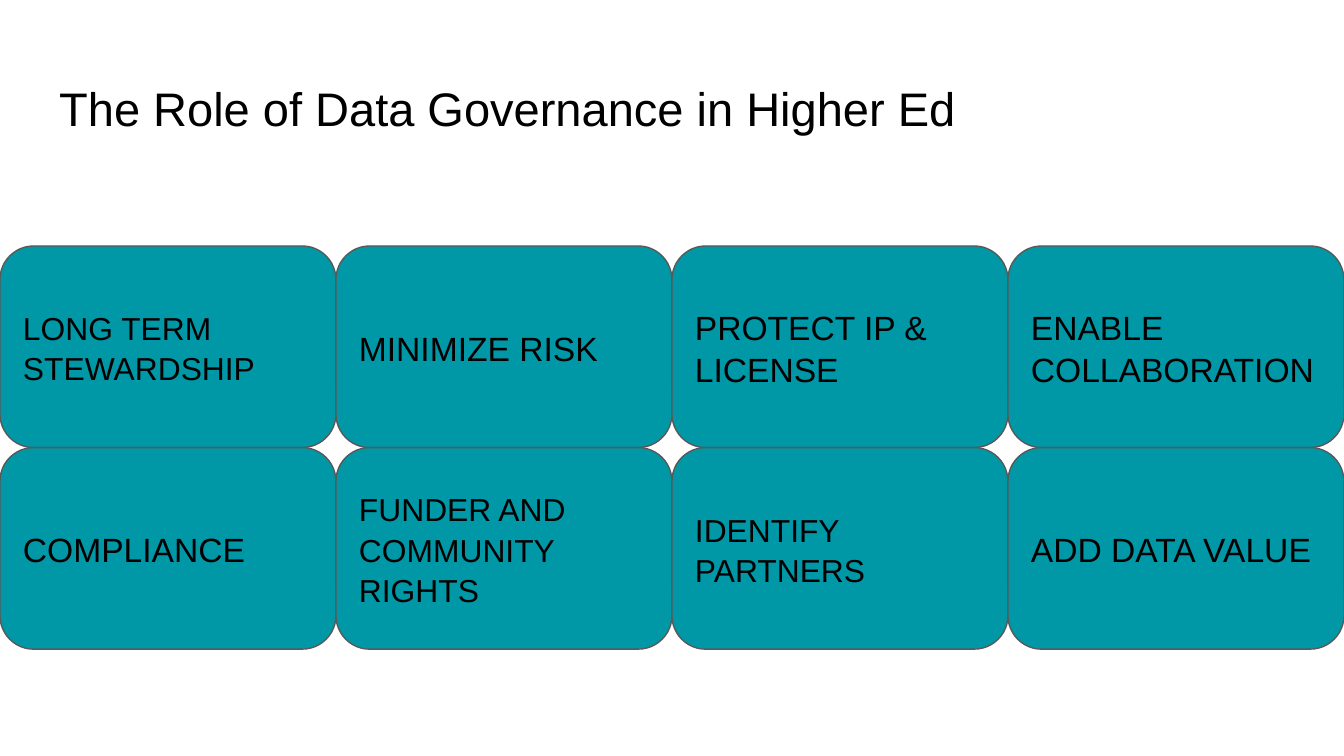
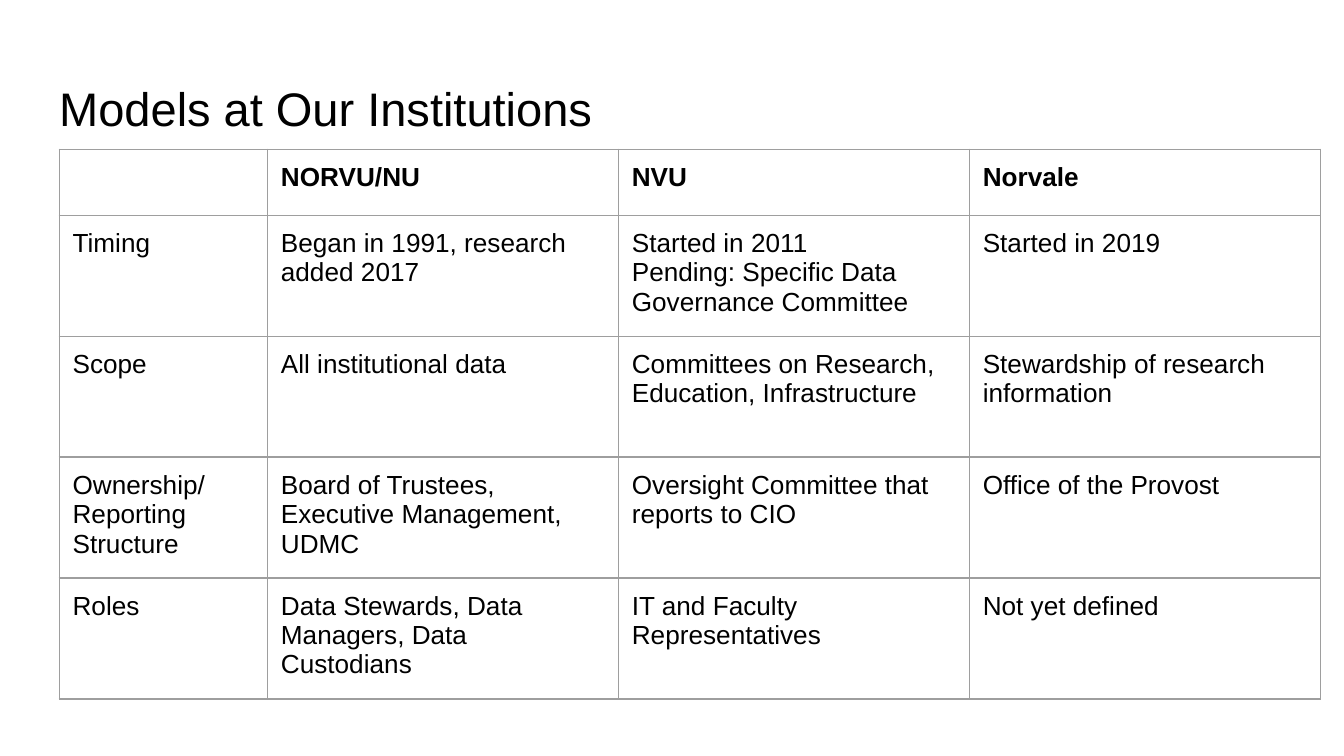
from lxml.etree import SubElement
from pptx import Presentation
from pptx.dml.color import RGBColor
from pptx.enum.shapes import MSO_SHAPE
from pptx.enum.text import MSO_ANCHOR, PP_ALIGN
from pptx.oxml.ns import qn
from pptx.util import Pt

FONT, BLACK, WHITE = "Arial", "000000", "FFFFFF"
TEAL, OUTLINE, GRID = "0097A7", "595959", "9E9E9E"
INSET = 7.2

ROLES_TITLE = "The Role of Data Governance in Higher Ed"
ROLES = [
    [("LONG TERM STEWARDSHIP", 17), ("MINIMIZE RISK", 18),
     ("PROTECT IP & LICENSE", 18), ("ENABLE COLLABORATION", 18)],
    [("COMPLIANCE", 18), ("FUNDER AND COMMUNITY RIGHTS", 17),
     ("IDENTIFY PARTNERS", 17), ("ADD DATA VALUE", 18)],
]
CARD_TOP, CARD_W, CARD_H = 131.8, 180, 108

MODELS_TITLE = "Models at Our Institutions"
MODELS = [
    ["", "NORVU/NU", "NVU", "Norvale"],
    ["Timing", "Began in 1991, research added 2017",
     "Started in 2011\nPending: Specific Data Governance Committee", "Started in 2019"],
    ["Scope", "All institutional data",
     "Committees on Research, Education, Infrastructure",
     "Stewardship of research information"],
    ["Ownership/\nReporting Structure", "Board of Trustees, Executive Management, UDMC",
     "Oversight Committee that reports to CIO", "Office of the Provost"],
    ["Roles", "Data Stewards, Data Managers, Data Custodians",
     "IT and Faculty Representatives", "Not yet defined"],
]
COLS = [111.6, 188, 188, 188]
ROWS = [35.3] + [64.8] * 4


def color(value):
    return RGBColor.from_string(value)


def inset(box):
    box.margin_left = box.margin_right = Pt(INSET)
    box.margin_top = box.margin_bottom = Pt(INSET)


def style_text(tf, size, bold=False, spacing=1.0):
    tf.word_wrap = True
    for p in tf.paragraphs:
        p.alignment = PP_ALIGN.LEFT
        p.line_spacing = spacing
        p.font.size = Pt(size)
        for r in p.runs:
            r.font.name = FONT
            r.font.size = Pt(size)
            r.font.bold = bold
            r.font.color.rgb = color(BLACK)


def add_slide(prs, title):
    s = prs.slides.add_slide(prs.slide_layouts[5])
    s.background.fill.solid()
    s.background.fill.fore_color.rgb = color(WHITE)
    sp = s.shapes.title
    sp.left, sp.top, sp.width, sp.height = Pt(24.5), Pt(35.3), Pt(671), Pt(45.2)
    tf = sp.text_frame
    tf.text = title
    inset(tf)
    tf.vertical_anchor = MSO_ANCHOR.MIDDLE
    style_text(tf, 25.2)
    return s


def add_card(s, row, col, text, size):
    sp = s.shapes.add_shape(MSO_SHAPE.ROUNDED_RECTANGLE, Pt(col * CARD_W),
                            Pt(CARD_TOP + row * CARD_H), Pt(CARD_W), Pt(CARD_H))
    sp.shadow.inherit = False
    sp.fill.solid()
    sp.fill.fore_color.rgb = color(TEAL)
    sp.line.color.rgb = color(OUTLINE)
    sp.line.width = Pt(0.75)
    tf = sp.text_frame
    tf.text = text
    inset(tf)
    tf.vertical_anchor = MSO_ANCHOR.MIDDLE
    style_text(tf, size, spacing=1.06)


def add_borders(cell):
    tcPr = cell._tc.get_or_add_tcPr()
    for i, side in enumerate(("a:lnL", "a:lnR", "a:lnT", "a:lnB")):
        ln = tcPr.makeelement(qn(side), {"w": str(Pt(0.75))})
        SubElement(SubElement(ln, qn("a:solidFill")), qn("a:srgbClr"), val=GRID)
        tcPr.insert(i, ln)


def add_models(s):
    table = s.shapes.add_table(len(ROWS), len(COLS), Pt(31.7), Pt(80),
                               Pt(sum(COLS)), Pt(sum(ROWS))).table
    for column, width in zip(table.columns, COLS):
        column.width = Pt(width)
    for i, (texts, height) in enumerate(zip(MODELS, ROWS)):
        table.rows[i].height = Pt(height)
        for j, text in enumerate(texts):
            cell = table.cell(i, j)
            cell.text_frame.text = text
            inset(cell)
            cell.fill.background()
            style_text(cell.text_frame, 14, bold=i == 0)
            add_borders(cell)


def main():
    prs = Presentation()
    prs.slide_width, prs.slide_height = Pt(720), Pt(405)
    s = add_slide(prs, ROLES_TITLE)
    for i, cards in enumerate(ROLES):
        for j, (text, size) in enumerate(cards):
            add_card(s, i, j, text, size)
    add_models(add_slide(prs, MODELS_TITLE))
    prs.save("out.pptx")


if __name__ == "__main__":
    main()
